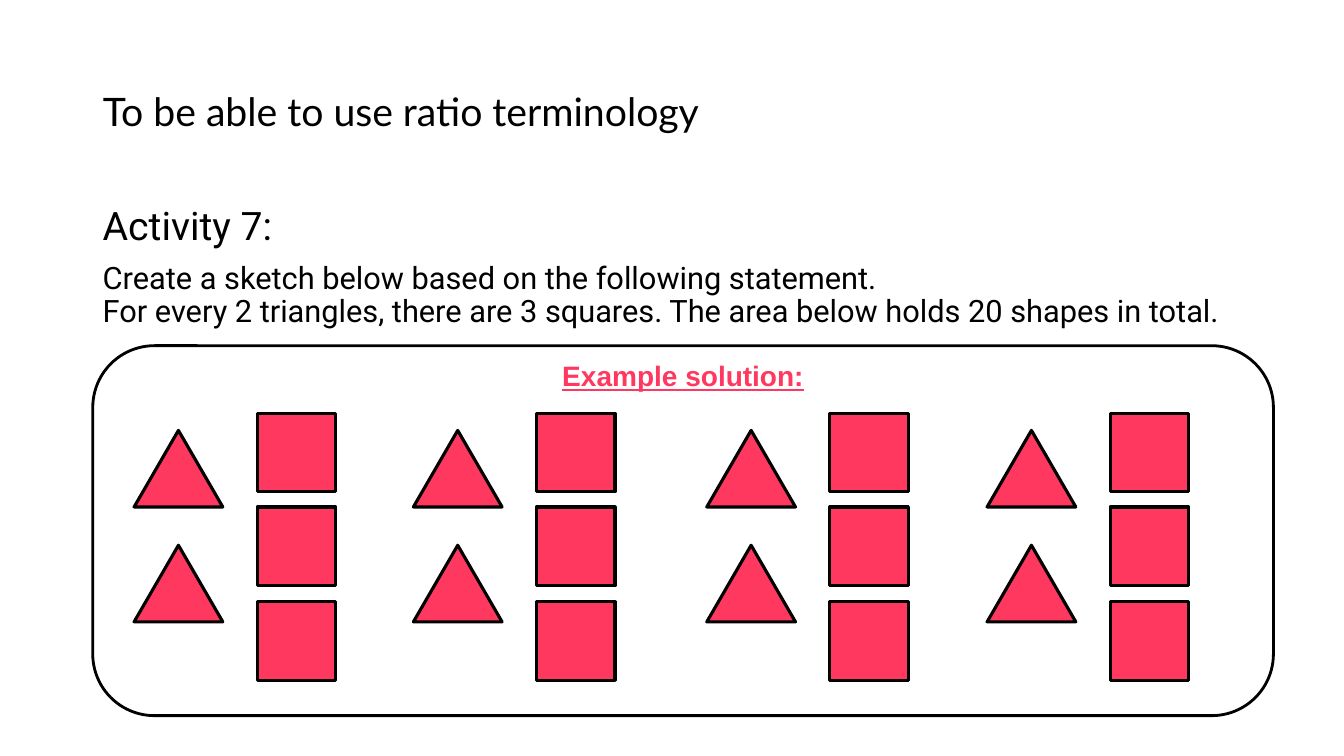
from pptx import Presentation
from pptx.dml.color import RGBColor
from pptx.enum.shapes import MSO_SHAPE as Shape
from pptx.enum.text import MSO_ANCHOR as Anchor, MSO_AUTO_SIZE as AutoSize, PP_ALIGN as Align
from pptx.util import Inches, Pt

BLACK = RGBColor(0x00, 0x00, 0x00)
WHITE = RGBColor(0xFF, 0xFF, 0xFF)
PINK = RGBColor(0xFF, 0x38, 0x60)

GROUP_LEFTS = (1.33, 4.1, 7.01, 9.79)
TRIANGLE_TOPS = (4.27, 5.41)
SQUARE_TOPS = (4.1, 5.03, 5.97)
SQUARE_OFFSET = 1.22


class Worksheet:
    """Draws styled elements on one slide."""

    def __init__(self, deck):
        self.page = deck.slides.add_slide(deck.slide_layouts[5])

    def fill_text(self, frame, lines, anchor=Anchor.TOP, align=Align.LEFT, spacing=0.9):
        """Fill a text frame with (text, font values) pairs, one per paragraph."""
        frame.word_wrap = True
        frame.auto_size = AutoSize.NONE
        frame.vertical_anchor = anchor
        for index, (text, values) in enumerate(lines):
            para = frame.add_paragraph() if index else frame.paragraphs[0]
            para.text = text
            para.alignment = align
            para.line_spacing = spacing
            para.space_before = Pt(10 if index else 0)
            for span in para.runs:
                span.font.color.rgb = BLACK
                for name, value in values.items():
                    if name == "color":
                        span.font.color.rgb = value
                    else:
                        setattr(span.font, name, value)

    def title(self, place, text, values):
        title = self.page.shapes.title
        title.left, title.top, title.width, title.height = map(Inches, place)
        self.fill_text(title.text_frame, [(text, values)], Anchor.MIDDLE)

    def text(self, place, lines, **layout):
        box = self.page.shapes.add_textbox(*map(Inches, place))
        self.fill_text(box.text_frame, lines, **layout)

    def shape(self, kind, place, fill=PINK, weight=2.25):
        shape = self.page.shapes.add_shape(kind, *map(Inches, place))
        shape.shadow.inherit = False
        shape.fill.solid()
        shape.fill.fore_color.rgb = fill
        shape.line.color.rgb = BLACK
        shape.line.width = Pt(weight)


def main():
    deck = Presentation()
    deck.slide_width, deck.slide_height = Inches(13.33), Inches(7.5)
    sheet = Worksheet(deck)

    sheet.title((0.92, 0.4, 9.6, 1.45), "To be able to use ratio terminology",
                {"name": "Lato", "size": Pt(28)})
    sheet.text((0.92, 2, 11.88, 1.4), [
        ("Activity 7:", {"name": "Roboto", "size": Pt(28)}),
        ("Create a sketch below based on the following statement.\v"
         "For every 2 triangles, there are 3 squares. "
         "The area below holds 20 shapes in total.",
         {"name": "Roboto", "size": Pt(22)}),
    ])

    sheet.shape(Shape.ROUNDED_RECTANGLE, (0.92, 3.43, 11.71, 3.67), WHITE, 2)
    sheet.text((0.92, 3.51, 11.71, 0.42), [
        ("Example solution:", {"name": "Arial", "size": Pt(20), "bold": True,
                               "underline": True, "color": PINK}),
    ], align=Align.CENTER, spacing=1.0)

    for left in GROUP_LEFTS:
        for top in TRIANGLE_TOPS:
            sheet.shape(Shape.ISOSCELES_TRIANGLE, (left, top, 0.88, 0.76))
        for top in SQUARE_TOPS:
            sheet.shape(Shape.RECTANGLE, (left + SQUARE_OFFSET, top, 0.78, 0.78))

    deck.save("out.pptx")


if __name__ == "__main__":
    main()
